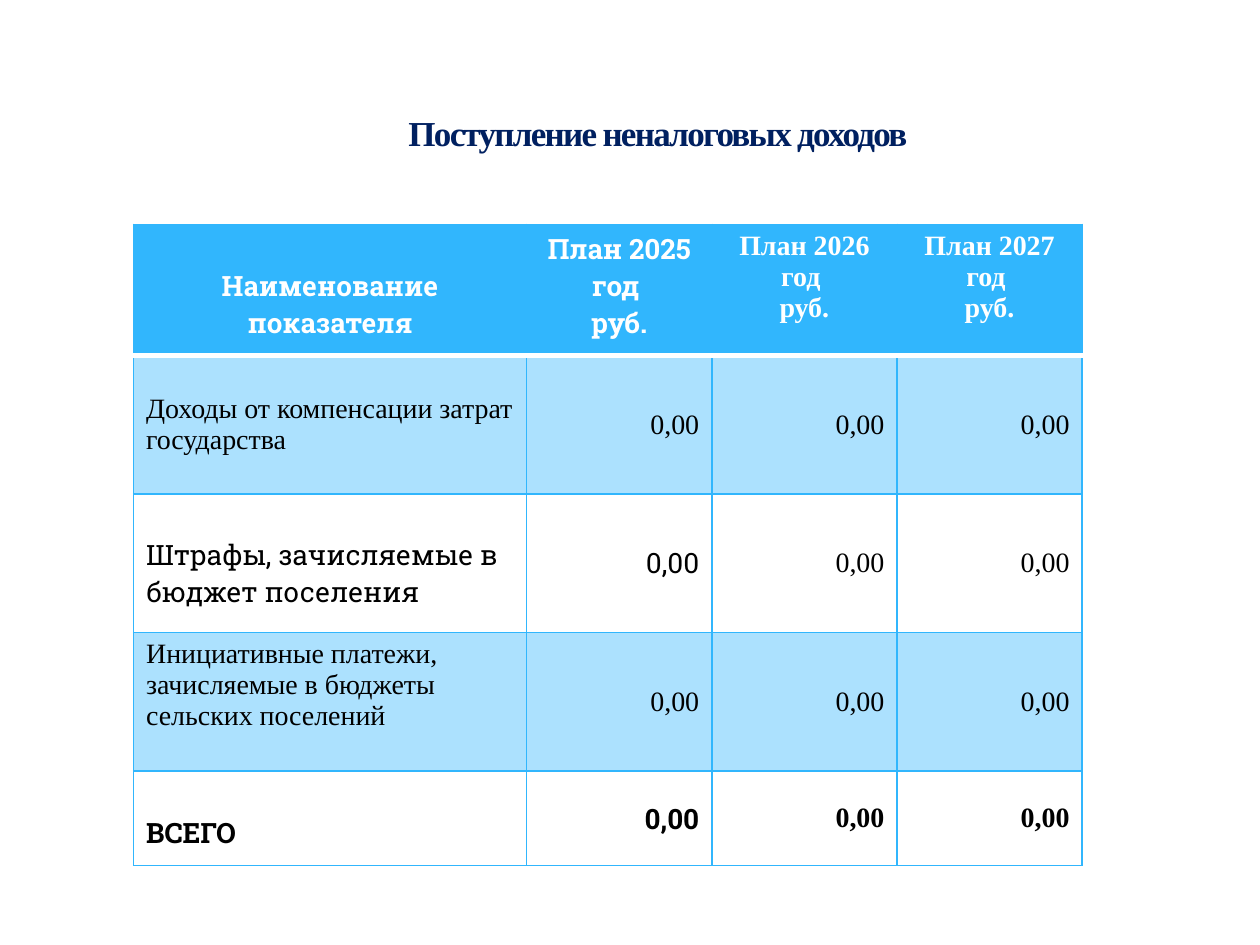
"""Build the slide with the table of non-tax revenues."""
from dataclasses import dataclass

import pptx
import pptx.dml.color
import pptx.enum.text
import pptx.oxml
import pptx.oxml.ns
import pptx.util

Inches = pptx.util.Inches
Pt = pptx.util.Pt
RGBColor = pptx.dml.color.RGBColor
Align = pptx.enum.text.PP_ALIGN
Anchor = pptx.enum.text.MSO_ANCHOR

BLUE = RGBColor(0x31, 0xB6, 0xFD)
NAVY = RGBColor(0x00, 0x20, 0x60)
WHITE = RGBColor(0xFF, 0xFF, 0xFF)
BLACK = RGBColor(0x00, 0x00, 0x00)
SERIF = "Times New Roman"
SLAB = "Roboto Slab"
COLUMN_WIDTHS = (3.12, 1.47, 1.47, 1.47)
YEARS = (2025, 2026, 2027)
BAND_OPACITY = 40


@dataclass(frozen=True)
class Indicator:
    """A revenue line: its name, height, fonts and look."""
    name: str
    height: float
    top_gap: float
    name_font: str
    first_value_font: str
    banded: bool = False
    bold: bool = False


INDICATORS = (
    Indicator("Доходы от компенсации затрат государства", 1.1, 0.3, SERIF, SERIF, banded=True),
    Indicator("Штрафы, зачисляемые в бюджет поселения", 1.1, 0.34, SLAB, SLAB),
    Indicator("Инициативные платежи, зачисляемые в бюджеты сельских поселений",
              1.1, 0.05, SERIF, SERIF, banded=True),
    Indicator("ВСЕГО", 0.75, 0.34, SLAB, SLAB, bold=True),
)
HEADER_HEIGHT = 1.04


def write(frame, lines: tuple[str, ...], align: Align, color: RGBColor, **font_values) -> None:
    """Write one paragraph per line with the given font values."""
    for number, line in enumerate(lines):
        paragraph = frame.add_paragraph() if number else frame.paragraphs[0]
        paragraph.alignment = align
        run = paragraph.add_run()
        run.text = line
        run.font.color.rgb = color
        for name, value in font_values.items():
            setattr(run.font, name, value)


def draw_borders(cell, top: tuple[RGBColor, int], bottom: tuple[RGBColor, int]) -> None:
    """Give the cell blue sides and the given top and bottom lines."""
    side = (BLUE, 1)
    properties = cell._tc.get_or_add_tcPr()
    borders = {"lnL": side, "lnR": side, "lnT": top, "lnB": bottom}
    for position, (tag, (color, width)) in enumerate(borders.items()):
        properties.insert(position, pptx.oxml.parse_xml(
            f'<a:{tag} {pptx.oxml.ns.nsdecls("a")} w="{Pt(width)}"><a:solidFill>'
            f'<a:srgbClr val="{color}"/></a:solidFill></a:{tag}>'))


def fill_band(cell) -> None:
    """Fill the cell with translucent blue."""
    cell.fill.solid()
    cell.fill.fore_color.rgb = BLUE
    color = cell._tc.tcPr.find(".//" + pptx.oxml.ns.qn("a:srgbClr"))
    color.append(pptx.oxml.parse_xml(
        f'<a:alpha {pptx.oxml.ns.nsdecls("a")} val="{BAND_OPACITY * 1000}"/>'))


def draw_header(table) -> None:
    """Fill the heading row."""
    headings = [("Наименование показателя",)] + [(f"План {year} год ", "руб.") for year in YEARS]
    fonts = (SLAB, SLAB, SERIF, SERIF)
    for column, (lines, font) in enumerate(zip(headings, fonts)):
        cell = table.cell(0, column)
        cell.fill.solid()
        cell.fill.fore_color.rgb = BLUE
        write(cell.text_frame, lines, Align.CENTER, WHITE, name=font, size=Pt(16), bold=True)
        draw_borders(cell, (BLUE, 1), (WHITE, 3))
    table.cell(0, 0).margin_top = Inches(0.34)


def draw_indicator(table, row: int, indicator: Indicator) -> None:
    """Fill one revenue row."""
    fonts = (indicator.name_font, indicator.first_value_font, SERIF, SERIF)
    for column, font in enumerate(fonts):
        cell = table.cell(row, column)
        if indicator.banded:
            fill_band(cell)
        else:
            cell.fill.background()
        if column:
            cell.vertical_anchor = Anchor.MIDDLE
        else:
            cell.margin_top = Inches(indicator.top_gap)
        write(cell.text_frame, ("0,00" if column else indicator.name,),
              Align.RIGHT if column else Align.LEFT, BLACK,
              name=font, size=Pt(16), bold=indicator.bold)
        draw_borders(cell, (WHITE, 3) if row == 1 else (BLUE, 1), (BLUE, 1))


def draw_table(slide) -> None:
    """Draw the revenue table."""
    heights = (HEADER_HEIGHT, *(indicator.height for indicator in INDICATORS))
    table = slide.shapes.add_table(
        len(heights), len(COLUMN_WIDTHS), Inches(1.06), Inches(1.78),
        Inches(sum(COLUMN_WIDTHS)), Inches(sum(heights))).table
    table.horz_banding = False
    for column, width in zip(table.columns, COLUMN_WIDTHS):
        column.width = Inches(width)
    for row, height in zip(table.rows, heights):
        row.height = Inches(height)
    draw_header(table)
    for row, indicator in enumerate(INDICATORS, start=1):
        draw_indicator(table, row, indicator)


def draw_title(slide) -> None:
    """Draw the slide title."""
    title = slide.shapes.add_textbox(
        Inches(1.38), Inches(0.68), Inches(7.68), Inches(0.74)).text_frame
    title.word_wrap = True
    title.vertical_anchor = Anchor.MIDDLE
    write(title, ("Поступление неналоговых доходов",), Align.CENTER, NAVY,
          name=SERIF, size=Pt(20), bold=True)
    title.paragraphs[0].runs[0].font._element.set("spc", "-100")


def main() -> None:
    """Build and save the presentation."""
    presentation = pptx.Presentation()
    presentation.slide_width = Inches(10)
    presentation.slide_height = Inches(7.5)
    slide = presentation.slides.add_slide(presentation.slide_layouts[6])
    draw_table(slide)
    draw_title(slide)
    presentation.save("out.pptx")


if __name__ == "__main__":
    main()
